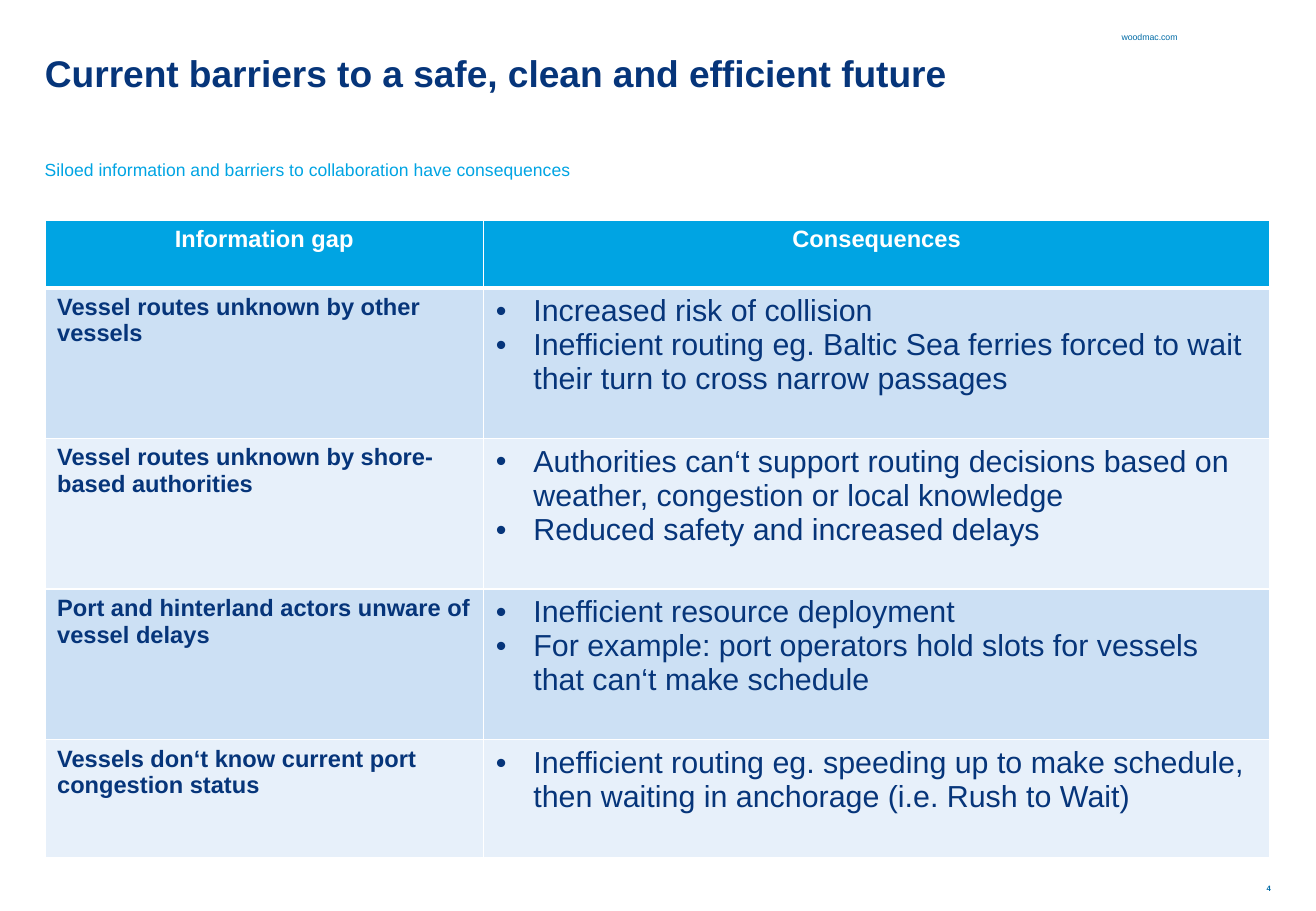
import pptx
import pptx.dml.color
import pptx.enum.text
import pptx.oxml.ns
import pptx.oxml.xmlchemy
import pptx.util
import lxml.etree

PIXEL = 9144
COLORS = {
    "navy": "06357A",
    "sky": "00A4E3",
    "steel": "006BA6",
    "band_dark": "CCE0F4",
    "band_light": "E7F0FA",
    "white": "FFFFFF",
}
ALIGN = pptx.enum.text.PP_ALIGN
ANCHOR = pptx.enum.text.MSO_ANCHOR
COLUMN_WIDTHS = [361, 647]
ROW_HEIGHTS = [56, 124, 124, 124, 97]
HEADINGS = ["Information gap", "Consequences"]
BARRIERS = [
    ("Vessel routes unknown by other vessels", [
        "Increased risk of collision",
        "Inefficient routing eg. Baltic Sea ferries forced to wait their turn to cross narrow passages",
    ]),
    ("Vessel routes unknown by shore-based authorities", [
        "Authorities can‘t support routing decisions based on weather, congestion or local knowledge",
        "Reduced safety and increased delays",
    ]),
    ("Port and hinterland actors unware of vessel delays", [
        "Inefficient resource deployment",
        "For example: port operators hold slots for vessels that can‘t make schedule",
    ]),
    ("Vessels don‘t know current port congestion status", [
        "Inefficient routing eg. speeding up to make schedule, then waiting in anchorage (i.e. Rush to Wait)",
    ]),
]


def px(length):
    return pptx.util.Emu(length * PIXEL)


def color(name):
    return pptx.dml.color.RGBColor.from_string(COLORS[name])


def apply_format(target, values):
    for name, value in values.items():
        setattr(target, name, value)


def add_child(parent, tag, **attributes):
    child = lxml.etree.SubElement(parent, pptx.oxml.ns.qn(tag))
    for name, value in attributes.items():
        child.set(name, str(value))
    return child


def write_text(paragraph, text, size, color_name, bold=False, align=ALIGN.LEFT, lowered=False):
    paragraph.alignment = align
    run = paragraph.add_run()
    run.text = text
    apply_format(run.font, {"name": "Arial", "size": pptx.util.Pt(size), "bold": bold})
    run.font.color.rgb = color(color_name)
    if lowered:
        run.font._element.set("baseline", "-25000")


def format_frame(frame, margins, anchor=ANCHOR.TOP):
    sides = ("margin_left", "margin_top", "margin_right", "margin_bottom")
    apply_format(frame, dict(zip(sides, map(px, margins))))
    apply_format(frame, {
        "word_wrap": True,
        "auto_size": pptx.enum.text.MSO_AUTO_SIZE.NONE,
        "vertical_anchor": anchor,
    })


def add_label(slide, box, text, size, color_name, margins=(0, 0, 0, 0), anchor=ANCHOR.TOP, **style):
    frame = slide.shapes.add_textbox(*map(px, box)).text_frame
    format_frame(frame, margins, anchor)
    write_text(frame.paragraphs[0], text, size, color_name, lowered=True, **style)


def fill_title(slide, box, text):
    title = slide.shapes.title
    apply_format(title, dict(zip(("left", "top", "width", "height"), map(px, box))))
    format_frame(title.text_frame, (0, 5, 10, 0))
    paragraph = title.text_frame.paragraphs[0]
    paragraph.line_spacing = pptx.util.Pt(22)
    write_text(paragraph, text, 22, "navy", bold=True)


def set_borders(cell, widths):
    properties = cell._tc.get_or_add_tcPr()
    for position, (side, width) in enumerate(widths.items()):
        line = add_child(properties, f"a:ln{side}", w=pptx.util.Pt(width))
        add_child(add_child(line, "a:solidFill"), "a:srgbClr", val=COLORS["white"])
        properties.insert(position, line)


def add_bullet(paragraph):
    properties = paragraph._p.get_or_add_pPr()
    properties.set("marL", str(px(31)))
    properties.set("indent", str(px(-31)))
    add_child(properties, "a:buFont", typeface="Arial")
    add_child(properties, "a:buChar", char="•")


def write_consequences(cell, consequences):
    frame = cell.text_frame
    for index, consequence in enumerate(consequences):
        paragraph = frame.add_paragraph() if index else frame.paragraphs[0]
        add_bullet(paragraph)
        write_text(paragraph, consequence, 18, "navy")


def add_barrier_table(slide, box):
    table = slide.shapes.add_table(len(ROW_HEIGHTS), len(COLUMN_WIDTHS), *map(px, box)).table
    for column, width in zip(table.columns, COLUMN_WIDTHS):
        column.width = px(width)
    for index, (row, height) in enumerate(zip(table.rows, ROW_HEIGHTS)):
        row.height = px(height)
        band = "sky" if index == 0 else "band_dark" if index % 2 else "band_light"
        for cell in row.cells:
            cell.fill.solid()
            cell.fill.fore_color.rgb = color(band)
            set_borders(cell, {
                "L": 1, "R": 1,
                "T": 3 if index == 1 else 1,
                "B": 3 if index == 0 else 1,
            })
    for cell, heading in zip(table.rows[0].cells, HEADINGS):
        write_text(cell.text_frame.paragraphs[0], heading, 14, "white", bold=True, align=ALIGN.CENTER)
    for index, (gap, consequences) in enumerate(BARRIERS, 1):
        write_text(table.cell(index, 0).text_frame.paragraphs[0], gap, 14, "navy", bold=True)
        write_consequences(table.cell(index, 1), consequences)


def build_barriers_slide(presentation, box):
    left, top, width, height = box
    slide = presentation.slides.add_slide(presentation.slide_layouts[5])
    add_label(slide, (left + 1027, top + 720, 19, 13), "4", 8, "steel", bold=True, align=ALIGN.RIGHT)
    add_label(slide, (left + 923, top + 19, 81, 15), "woodmac.com", 9, "steel", anchor=ANCHOR.MIDDLE)
    add_barrier_table(slide, (left + 37, top + 181, sum(COLUMN_WIDTHS), sum(ROW_HEIGHTS)))
    fill_title(slide, (left + 37, top + 43, width - 74, 71),
               "Current barriers to a safe, clean and efficient future")
    add_label(slide, (left + 27, top + 109, 1007, 60),
              "Siloed information and barriers to collaboration have consequences",
              18, "sky", margins=(10, 5, 10, 5))


def main():
    presentation = pptx.Presentation()
    apply_format(presentation, {"slide_width": px(1083), "slide_height": px(750)})
    build_barriers_slide(presentation, (0, 0, 1083, 750))
    presentation.save("out.pptx")


if __name__ == "__main__":
    main()
